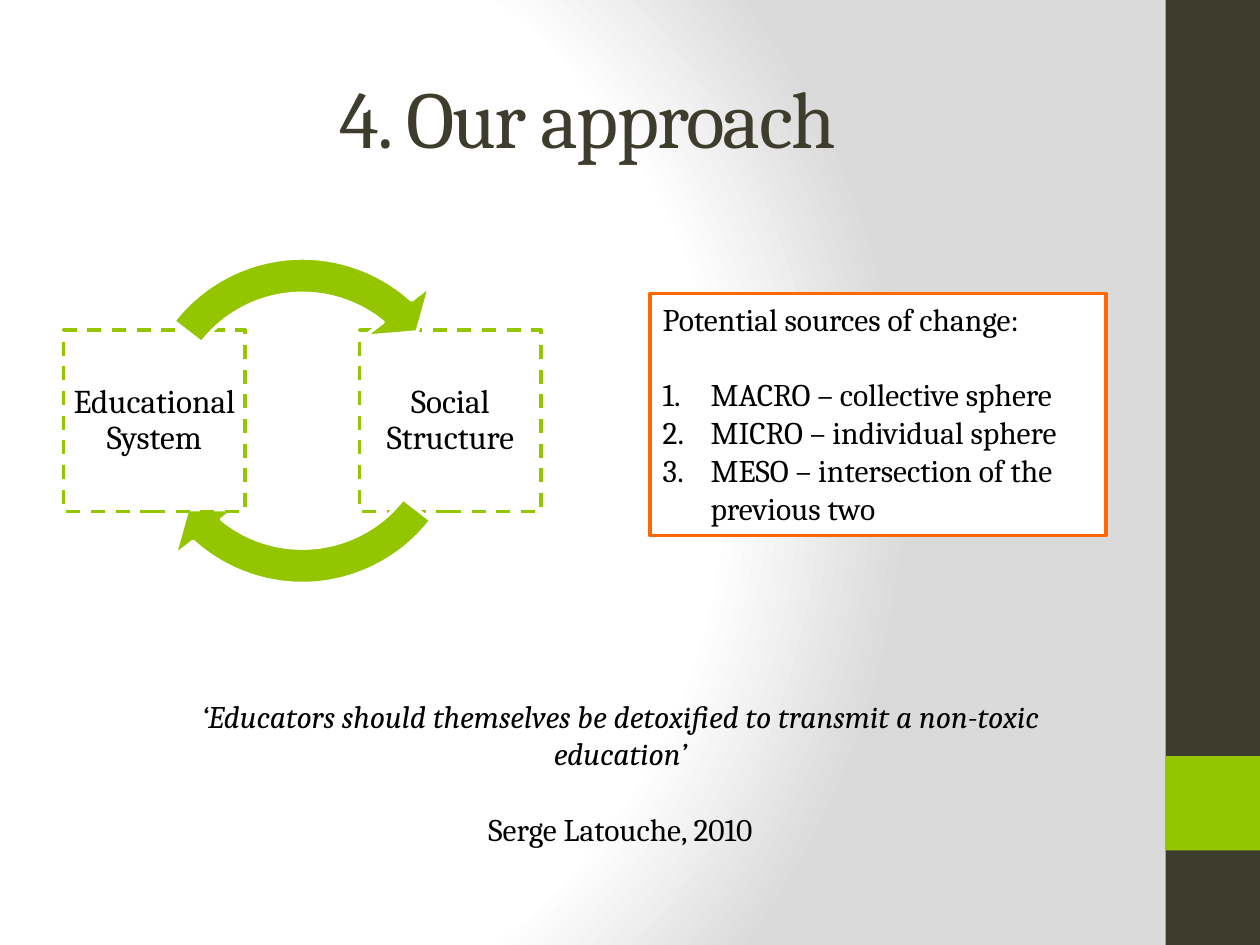
from dataclasses import dataclass

from lxml.etree import SubElement
from pptx import Presentation
from pptx.dml.color import RGBColor
from pptx.enum.dml import MSO_LINE
from pptx.enum.shapes import MSO_SHAPE as Shape
from pptx.enum.text import MSO_ANCHOR as Anchor, PP_ALIGN as Align
from pptx.oxml import parse_xml
from pptx.oxml.ns import nsdecls, qn
from pptx.util import Inches, Pt


@dataclass(frozen=True)
class Theme:
    font: str = "Cambria"
    dark: str = "3E3D2D"
    green: str = "94C600"
    orange: str = "FF6700"
    white: str = "FFFFFF"
    grey: str = "DADADA"
    black: str = "000000"
    title: int = 46
    node: int = 19
    body: int = 18
    blank_line: float = 21.5
    line: int = 2


THEME = Theme()
CELL = 0.25  # inches; the slide is a grid of 40 columns by 30 rows
COLUMNS, ROWS = 40, 30


def cells(*counts):
    return [Inches(count * CELL) for count in counts]


def move(shape, area):
    shape.left, shape.top, shape.width, shape.height = cells(*area)


def rgb(value):
    return RGBColor.from_string(value)


def paint(shape, fill, line=None, dash=None):
    shape.fill.solid()
    shape.fill.fore_color.rgb = rgb(fill)
    if line is None:
        shape.line.fill.background()
        return
    shape.line.color.rgb = rgb(line)
    shape.line.width = Pt(THEME.line)
    if dash:
        shape.line.dash_style = dash


def add_shape(page, kind, area, fill, line=None, dash=None):
    shape = page.shapes.add_shape(kind, *cells(*area))
    shape.shadow.inherit = False
    paint(shape, fill, line, dash)
    return shape


def write(frame, text, size=THEME.body, color=THEME.black, align=Align.LEFT,
          italic=False, before=0, leading=1.0, tracking=None):
    """Fill the empty first paragraph, or add one after the others."""
    last = frame.paragraphs[-1]
    para = frame.add_paragraph() if last.runs else last
    para.alignment = align
    para.space_before = Pt(before)
    para.line_spacing = leading
    span = para.add_run()
    span.text = text
    span.font.name = THEME.font
    span.font.size = Pt(size)
    span.font.italic = italic
    span.font.color.rgb = rgb(color)
    if tracking:
        span.font._element.set("spc", str(tracking * 100))
    return para


def set_bullet(para, numbered, indent=0.0):
    properties = para._p.get_or_add_pPr()
    properties.set("marL", str(Inches(indent)))
    properties.set("indent", str(-Inches(indent)))
    if numbered:
        SubElement(properties, qn("a:buFont"), typeface="+mj-lt")
        SubElement(properties, qn("a:buAutoNum"), type="arabicPeriod")
    else:
        SubElement(properties, qn("a:buNone"))


def set_background(page):
    """Radial gradient, which python-pptx offers only as XML."""
    stops = "".join(
        f'<a:gs pos="{share * 1000}"><a:srgbClr val="{color}"/></a:gs>'
        for share, color in ((0, THEME.white), (75, THEME.white), (100, THEME.grey)))
    page._element.cSld.insert(0, parse_xml(
        f'<p:bg {nsdecls("p", "a")}><p:bgPr><a:gradFill rotWithShape="1">'
        f'<a:gsLst>{stops}</a:gsLst><a:path path="circle">'
        '<a:fillToRect l="20000" t="50000" r="100000" b="50000"/></a:path>'
        '</a:gradFill><a:effectLst/></p:bgPr></p:bg>'))


def add_side_bar(page):
    left, width = 37, 3
    add_shape(page, Shape.RECTANGLE, (left, 0, width, ROWS), THEME.dark)
    add_shape(page, Shape.RECTANGLE, (left, 24, width, 3), THEME.green)


def add_title(page, text):
    title = page.shapes.title
    move(title, (2, 1.2, 33.32, 5))
    title.text_frame.vertical_anchor = Anchor.MIDDLE
    write(title.text_frame, text, size=THEME.title, color=THEME.dark,
          align=Align.CENTER, leading=1.0, tracking=-1)


def add_node(page, center_x, center_y, text):
    side = 5.76
    node = add_shape(page, Shape.RECTANGLE,
                     (center_x - side / 2, center_y - side / 2, side, side),
                     THEME.white, THEME.green, MSO_LINE.DASH)
    frame = node.text_frame
    frame.word_wrap = True
    frame.vertical_anchor = Anchor.MIDDLE
    frame.margin_left = frame.margin_right = Inches(0.03)
    frame.margin_top = frame.margin_bottom = Inches(0.03)
    write(frame, text, size=THEME.node, align=Align.CENTER, leading=0.9)


def add_cycle_arrow(page, center_x, center_y, turn):
    side = 11.84
    arrow = add_shape(page, Shape.CIRCULAR_ARROW,
                      (center_x - side / 2, center_y - side / 2, side, side),
                      THEME.green, THEME.white)
    # Angles are in units of 100000/60000 degree, so 108 is half a turn.
    settings = (0.095, 6.845, 78.53 + turn, 22.63 + turn, 0.111)
    for index, value in enumerate(settings):
        arrow.adjustments[index] = value


def add_cycle(page, left_text, right_text):
    center_x, center_y, reach = 9.6, 13.36, 4.7
    for side, text, turn in ((1, right_text, 0), (-1, left_text, 108)):
        add_node(page, center_x + side * reach, center_y, text)
        add_cycle_arrow(page, center_x, center_y, turn)


def add_list(page, heading, items):
    box = page.placeholders[1]
    move(box, (20.64, 9.32, 14.48, 7.68))
    paint(box, THEME.white, THEME.orange)
    frame = box.text_frame
    set_bullet(write(frame, heading), numbered=False)
    for index, item in enumerate(items):
        para = write(frame, item, before=0 if index else THEME.blank_line)
        set_bullet(para, numbered=True, indent=0.38)


def add_quote(page, quote, author):
    box = page.shapes.add_textbox(*cells(5.84, 21.92, 27.72, 5.24))
    box.text_frame.word_wrap = True
    write(box.text_frame, quote, align=Align.CENTER, italic=True)
    write(box.text_frame, author, align=Align.CENTER, before=THEME.blank_line)


def main():
    deck = Presentation()
    deck.slide_width, deck.slide_height = cells(COLUMNS, ROWS)
    page = deck.slides.add_slide(deck.slide_layouts[1])
    set_background(page)
    add_side_bar(page)
    add_title(page, "4. Our approach")
    add_cycle(page, "Educational System", "Social Structure")
    add_list(page, "Potential sources of change:", (
        "MACRO – collective sphere",
        "MICRO – individual sphere",
        "MESO – intersection of the previous two"))
    add_quote(
        page,
        "‘Educators should themselves be detoxified to transmit a non-toxic education’",
        "Serge Latouche, 2010")
    deck.save("out.pptx")


if __name__ == "__main__":
    main()
